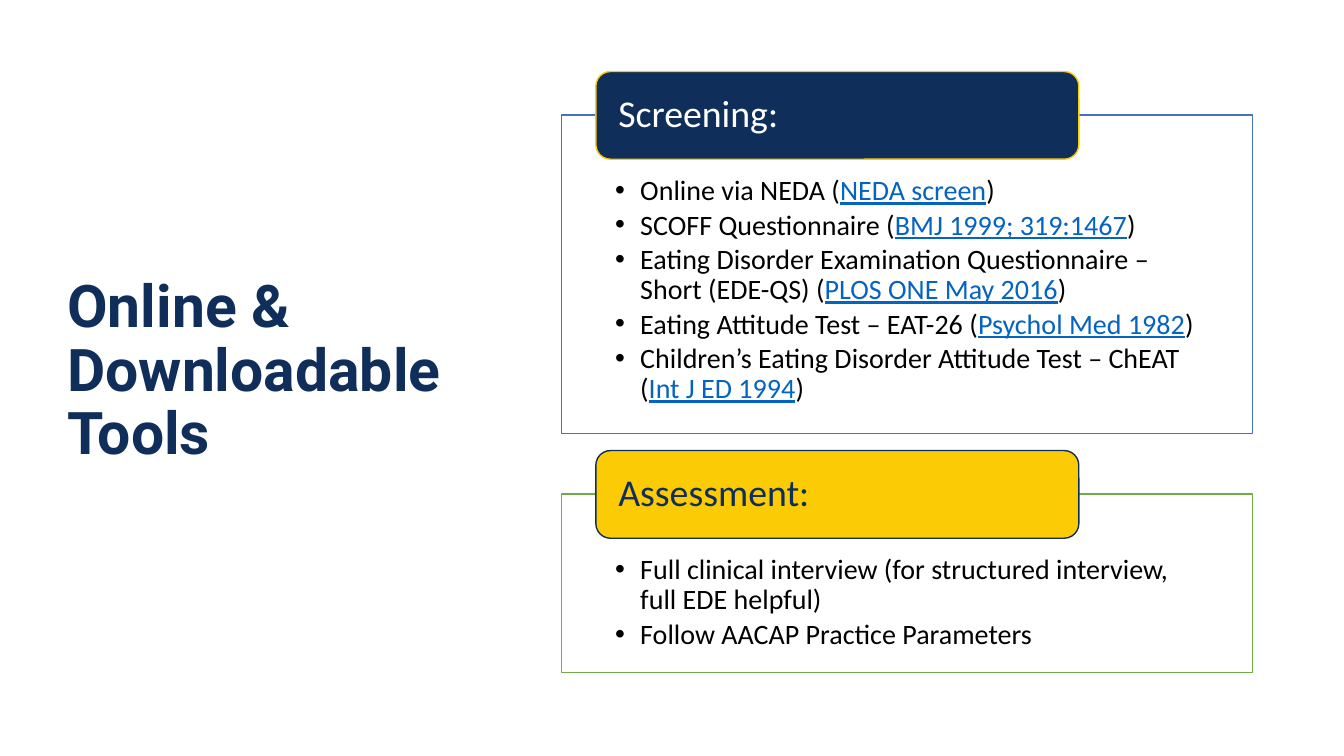
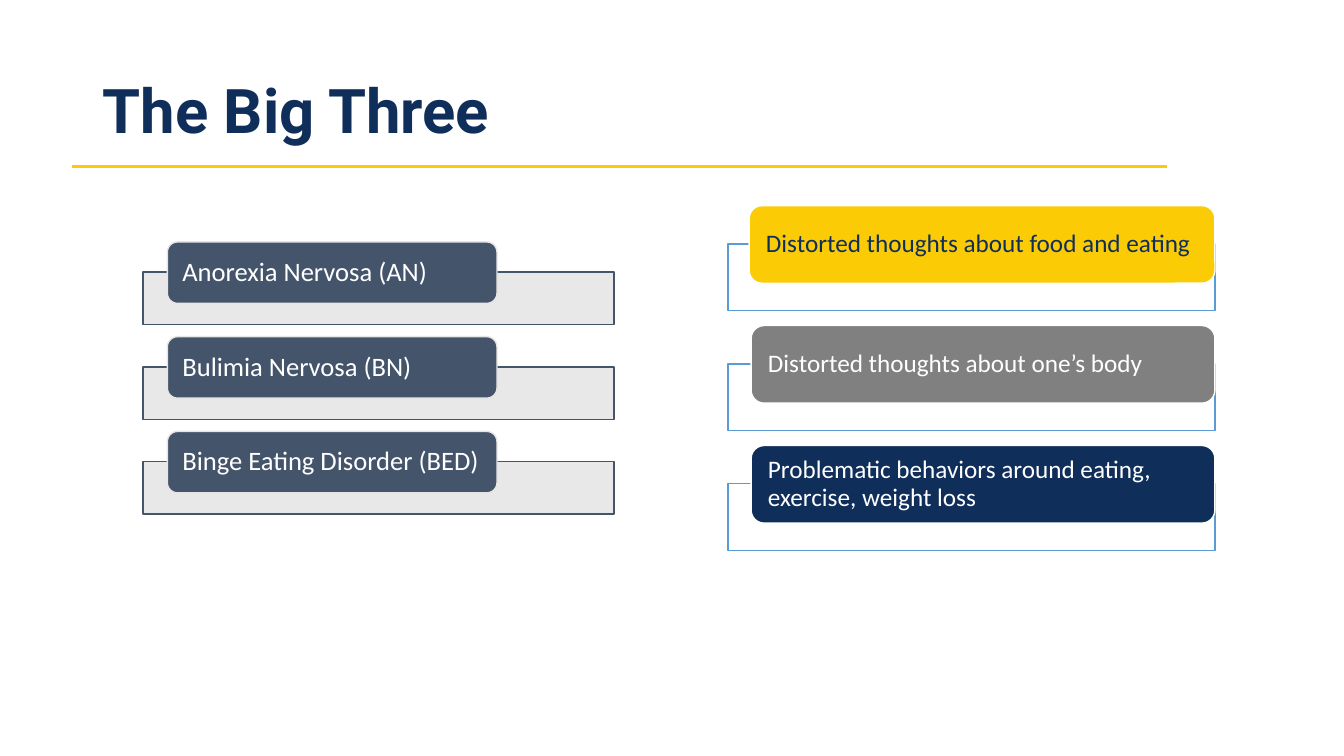
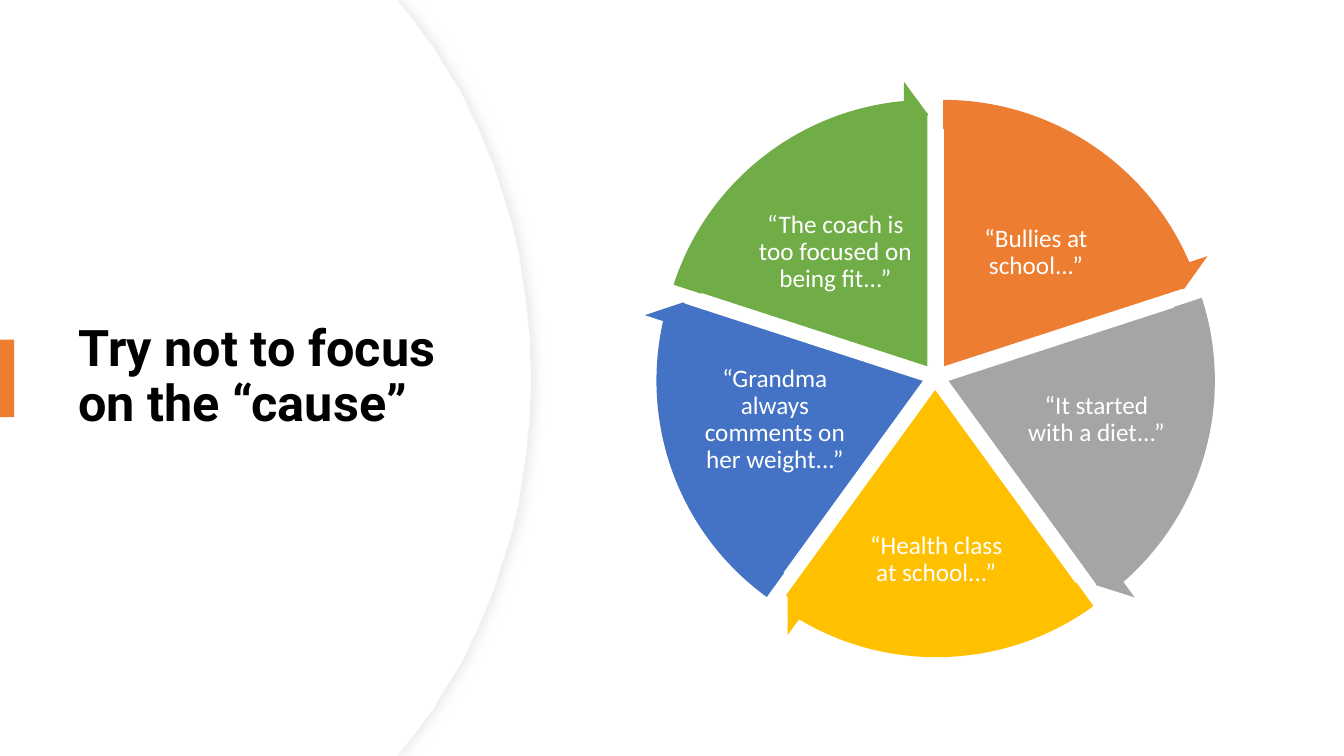
import math
from dataclasses import dataclass

import pptx
import pptx.dml.color
import pptx.enum.shapes
import pptx.enum.text
import pptx.oxml
import pptx.oxml.ns
import pptx.oxml.xmlchemy
import pptx.util
from lxml import etree

EMU_PER_PX = 9144  # 100 px to the inch
SHAPE = pptx.enum.shapes.MSO_SHAPE
ALIGN = pptx.enum.text.PP_ALIGN
ANCHOR = pptx.enum.text.MSO_ANCHOR


@dataclass(frozen=True)
class Theme:
    navy: str = "102E5A"
    gold: str = "FBCB06"
    white: str = "FFFFFF"
    black: str = "000000"
    link: str = "0563C1"
    blue: str = "4472C4"
    sky: str = "5B9BD5"
    green: str = "70AD47"
    orange: str = "ED7D31"
    amber: str = "FFC000"
    silver: str = "A5A5A5"
    gray: str = "808080"
    slate: str = "44546A"
    mist: str = "E7E6E6"
    edge: str = "EFEFEF"
    shadow: str = "D9D9D9"
    title_font: str = "Roboto"
    body_font: str = "Calibri"
    heading_size: int = 27
    bullet_size: int = 20
    disorder_size: int = 19
    label_size: int = 18
    line_spacing: float = 0.9


THEME = Theme()


def px(length):
    return pptx.util.Emu(round(length * EMU_PER_PX))


def rgb(color):
    return pptx.dml.color.RGBColor.from_string(color)


def add_child(parent, tag, **attributes):
    child = etree.SubElement(parent, pptx.oxml.ns.qn(tag))
    for key, value in attributes.items():
        child.set(key, str(value))
    return child


def paint(shape, fill, line=None, line_width=1, alpha=None):
    shape.shadow.inherit = False
    shape.fill.solid()
    shape.fill.fore_color.rgb = rgb(fill)
    if alpha:
        color = shape.fill._xPr.find(".//" + pptx.oxml.ns.qn("a:srgbClr"))
        add_child(color, "a:alpha", val=alpha * 1000)
    if line:
        shape.line.color.rgb = rgb(line)
        shape.line.width = pptx.util.Pt(line_width)
    else:
        shape.line.fill.background()


def add_shape(slide, kind, box, fill, line=None, alpha=None, adjustments=()):
    shape = slide.shapes.add_shape(kind, *map(px, box))
    for index, value in enumerate(adjustments):
        shape.adjustments[index] = value
    paint(shape, fill, line, alpha=alpha)
    return shape


def set_frame(shape, insets, anchor=ANCHOR.MIDDLE):
    """Prepare the text frame; insets are left, top, right, bottom."""
    frame = shape.text_frame
    frame.word_wrap = True
    frame.vertical_anchor = anchor
    (frame.margin_left, frame.margin_top,
     frame.margin_right, frame.margin_bottom) = map(px, insets)
    return frame


def set_paragraph(paragraph, align=ALIGN.LEFT):
    paragraph.alignment = align
    paragraph.line_spacing = THEME.line_spacing


def add_run(paragraph, text, size, color, font=THEME.body_font, bold=False, underline=False):
    run = paragraph.add_run()
    run.text = text
    run.font.name = font
    run.font.size = pptx.util.Pt(size)
    run.font.color.rgb = rgb(color)
    run.font.bold = bold
    run.font.underline = underline


def add_text(slide, box, text, size, color, insets, align=ALIGN.LEFT,
             font=THEME.body_font, bold=False):
    frame = set_frame(slide.shapes.add_textbox(*map(px, box)), insets)
    paragraph = frame.paragraphs[0]
    set_paragraph(paragraph, align)
    add_run(paragraph, text, size, color, font, bold)


def add_title(slide, box, text, size, color=THEME.navy):
    add_text(slide, box, text, size, color, (10, 5, 10, 5),
             font=THEME.title_font, bold=True)


def add_bullets(panel, items):
    """Each item is a tuple of runs in which every second one is styled as a link."""
    frame = set_frame(panel, (53, 61, 53, 16), ANCHOR.TOP)
    for index, item in enumerate(items):
        paragraph = frame.add_paragraph() if index else frame.paragraphs[0]
        set_paragraph(paragraph)
        paragraph.space_after = pptx.util.Pt(3)
        properties = paragraph._p.get_or_add_pPr()
        properties.set("marL", str(px(25)))
        properties.set("indent", str(px(-25)))
        add_child(properties, "a:buFont", typeface="Arial")
        add_child(properties, "a:buChar", char="•")
        for position, text in enumerate(item):
            is_link = position % 2 == 1
            add_run(paragraph, text, THEME.bullet_size,
                    THEME.link if is_link else THEME.black, underline=is_link)


def add_card(slide, panel_box, panel_colors, tab_span, tab_colors, heading, size, inset):
    """Draw a panel with a rounded tab centred on its top edge.

    tab_span is left, width, height; tab_colors is fill, line, text.
    """
    panel = add_shape(slide, SHAPE.RECTANGLE, panel_box, *panel_colors, alpha=90)
    left, width, height = tab_span
    fill, line, text_color = tab_colors
    tab_box = (left, panel_box[1] - height // 2, width, height)
    tab = add_shape(slide, SHAPE.ROUNDED_RECTANGLE, tab_box, fill, line)
    paragraph = set_frame(tab, (inset, 0, inset, 0)).paragraphs[0]
    set_paragraph(paragraph)
    add_run(paragraph, heading, size, text_color)
    return panel


def add_rule(slide, left, right, y):
    rule = slide.shapes.add_connector(
        pptx.enum.shapes.MSO_CONNECTOR.STRAIGHT, px(left), px(y), px(right), px(y))
    rule.line.color.rgb = rgb(THEME.gold)
    rule.line.width = pptx.util.Pt(2.25)
    add_child(rule._element.spPr, "a:effectLst")


def bezier(start, control_1, control_2, end, steps=30):
    points = []
    for step in range(1, steps + 1):
        t = step / steps
        weights = ((1 - t) ** 3, 3 * t * (1 - t) ** 2, 3 * t * t * (1 - t), t ** 3)
        corners = (start, control_1, control_2, end)
        points.append(tuple(sum(w * corner[axis] for w, corner in zip(weights, corners))
                            for axis in (0, 1)))
    return points


def add_curved_panel(slide, edge, line=None):
    """Draw the left panel whose right side bulges out to edge."""
    height, corner, knee = 750, 394, edge - 126
    upper = bezier((knee, 8), (edge - 48, 102), (edge, 232), (edge, height / 2))
    lower = [(x, height - y) for x, y in reversed(upper[:-1])]
    builder = slide.shapes.build_freeform(0, 0, scale=EMU_PER_PX)
    builder.add_line_segments(
        [(corner, 0), (knee, 8), *upper, *lower, (knee, height - 8),
         (corner, height), (0, height)], close=True)
    panel = builder.convert_to_shape()
    paint(panel, THEME.white, line, 0.75)
    return panel


def add_soft_shadow(shape):
    effects = shape._element.spPr.find(pptx.oxml.ns.qn("a:effectLst"))
    shadow = add_child(effects, "a:outerShdw", blurRad=pptx.util.Pt(7),
                       dist=pptx.util.Pt(3), dir=0, algn="l", rotWithShape=0)
    color = add_child(shadow, "a:srgbClr", val=THEME.shadow)
    add_child(color, "a:alpha", val=50000)


def add_cycle(slide, causes):
    """Draw equal slices pushed out from one centre, each edged with an arrow."""
    center_x, center_y, push = 928, 374, 12
    pie_size, arrow_size = 507, 569
    full_turn, first_start = 216, 162  # preset angles, 0.6 to the degree
    sweep = full_turn / len(causes)

    slices = []
    for index, (text, color, label_box) in enumerate(causes):
        start = (first_start + index * sweep) % full_turn
        middle = math.radians((start + sweep / 2) / 0.6)
        x = center_x + push * math.cos(middle)
        y = center_y + push * math.sin(middle)
        slices.append((start, x, y, color))
        add_shape(slide, SHAPE.PIE, square(x, y, pie_size), color, THEME.white,
                  adjustments=(start, (start + sweep) % full_turn))
        add_text(slide, label_box, text, THEME.label_size, THEME.white,
                 (3, 3, 3, 3), ALIGN.CENTER)

    for start, x, y, color in slices:
        tip = (start + 39.92) % full_turn
        add_shape(slide, SHAPE.CIRCULAR_ARROW, square(x, y, arrow_size), color,
                  adjustments=(0.051, 3.275, tip, start, 0.059))


def square(x, y, size):
    return round(x - size / 2), round(y - size / 2), size, size


def build_tools(slide):
    add_title(slide, (57, 68, 416, 602), "Online & Downloadable Tools", 42)
    screening = [
        ("Online via NEDA (", "NEDA screen", ")"),
        ("SCOFF Questionnaire (", "BMJ 1999; 319:1467", ")"),
        ("Eating Disorder Examination Questionnaire – Short (EDE-QS) (",
         "PLOS ONE May 2016", ")"),
        ("Eating Attitude Test – EAT-26 (", "Psychol Med 1982", ")"),
        ("Children’s Eating Disorder Attitude Test – ChEAT (", "Int J ED 1994", ")"),
    ]
    assessment = [
        ("Full clinical interview (for structured interview, full EDE helpful)",),
        ("Follow AACAP Practice Parameters",),
    ]
    groups = [
        ("Screening:", screening, 114, 316, THEME.blue,
         (THEME.navy, THEME.gold, THEME.white)),
        ("Assessment:", assessment, 490, 177, THEME.green,
         (THEME.gold, THEME.navy, THEME.navy)),
    ]
    for heading, items, top, height, outline, tab_colors in groups:
        panel = add_card(slide, (557, top, 685, height), (THEME.white, outline),
                         (591, 479, 87), tab_colors, heading, THEME.heading_size, 18)
        add_bullets(panel, items)


def build_big_three(slide):
    add_title(slide, (92, 40, 1150, 145), "The Big Three", 44)
    disorders = ["Anorexia Nervosa (AN)", "Bulimia Nervosa (BN)",
                 "Binge Eating Disorder (BED)"]
    for row, disorder in enumerate(disorders):
        add_card(slide, (142, 270 + 94 * row, 467, 52), (THEME.mist, THEME.slate),
                 (166, 327, 61), (THEME.slate, THEME.mist, THEME.white),
                 disorder, THEME.disorder_size, 12)

    features = [
        ("Distorted thoughts about food and eating", 743, THEME.gold, THEME.navy),
        ("Distorted thoughts about one’s body", 745, THEME.gray, THEME.white),
        ("Problematic behaviors around eating, exercise, weight loss", 745,
         THEME.navy, THEME.white),
    ]
    panel_left, panel_width = 722, 483
    for row, (feature, left, fill, text_color) in enumerate(features):
        add_card(slide, (panel_left, 242 + 119 * row, panel_width, 66),
                 (THEME.white, THEME.sky),
                 (left, panel_left + panel_width - left, 77),
                 (fill, THEME.white, text_color), feature, THEME.label_size, 13)
    add_rule(slide, 71, 1157, 165)


def build_cause(slide):
    add_soft_shadow(add_curved_panel(slide, 527, THEME.edge))
    add_curved_panel(slide, 526)
    add_title(slide, (68, 127, 394, 495), "Try not to focus on the “cause”", 36, THEME.black)
    add_shape(slide, SHAPE.RECTANGLE, (0, 337, 14, 77), THEME.orange)
    add_cycle(slide, [
        ("“Bullies at school...”", THEME.orange, (946, 196, 163, 109)),
        ("“It started with a diet...”", THEME.silver, (1012, 356, 151, 121)),
        ("“Health class at school...”", THEME.amber, (856, 489, 145, 133)),
        ("“Grandma always comments on her weight...”", THEME.blue, (693, 356, 151, 121)),
        ("“The coach is too focused on being fit...”", THEME.green, (747, 196, 163, 109)),
    ])


def main():
    deck = pptx.Presentation()
    deck.slide_width, deck.slide_height = px(1333), px(750)
    blank = deck.slide_layouts[6]
    for build in (build_tools, build_big_three, build_cause):
        build(deck.slides.add_slide(blank))
    deck.save("out.pptx")


if __name__ == "__main__":
    main()
